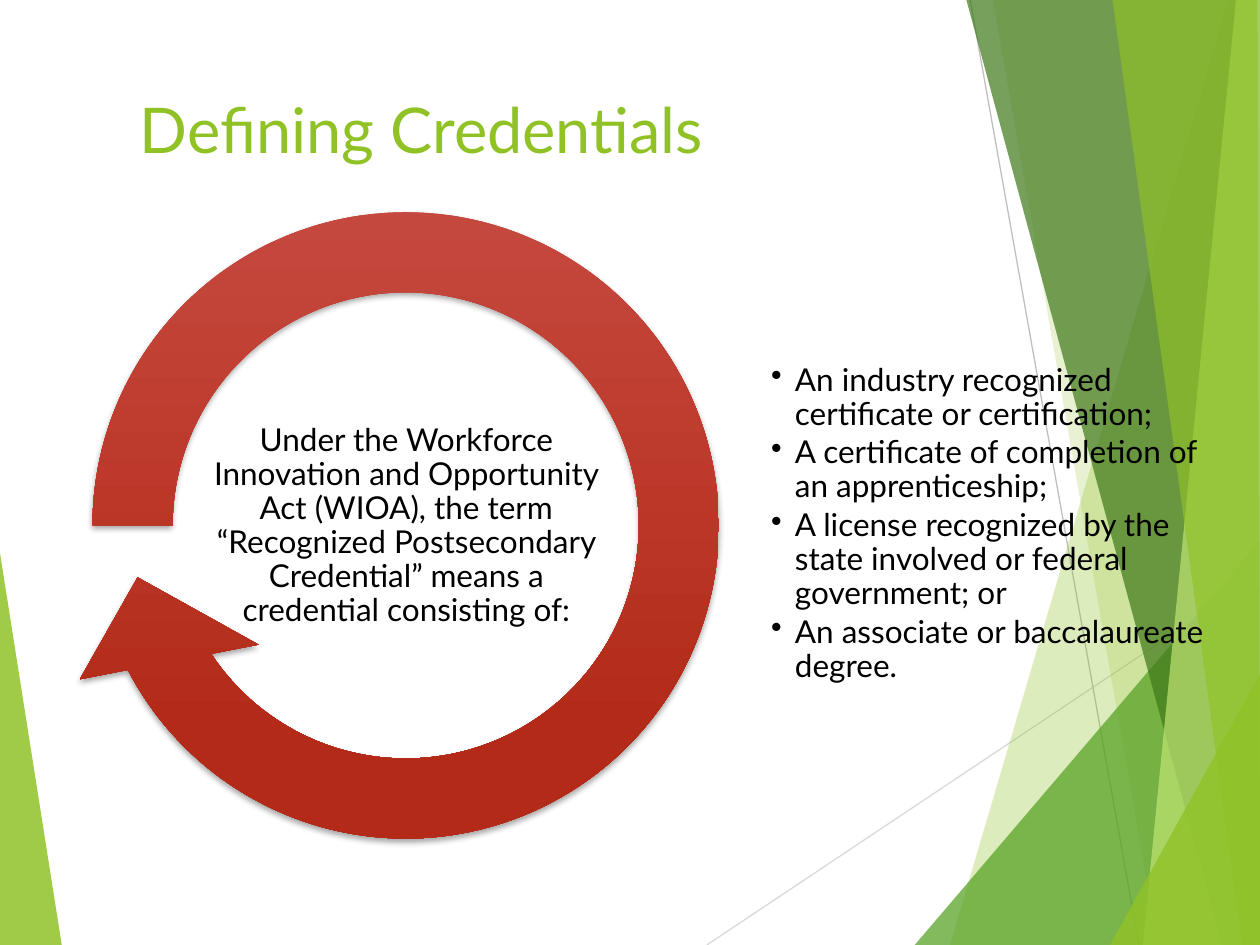
from lxml import etree
from pptx import Presentation
from pptx import util as u
from pptx.dml.color import RGBColor
from pptx.enum import shapes, text
from pptx.oxml import ns

LIME = RGBColor(0x90, 0xC2, 0x26)
GREEN = RGBColor(0x54, 0xA0, 0x21)
DARK = RGBColor(0x3F, 0x78, 0x19)
PALE = RGBColor(0xC0, 0xE4, 0x74)
RED = RGBColor(0xC7, 0x4B, 0x42)
BRICK = RGBColor(0xB3, 0x2B, 0x18)
BLACK = RGBColor(0, 0, 0)
GREY = RGBColor(0xBF, 0xBF, 0xBF)
SILVER = RGBColor(0xD9, 0xD9, 0xD9)

BODY = {"name": "Lato", "size": u.Pt(18), "color": BLACK}
HEAD = {"name": "Lato", "size": u.Pt(36), "color": LIME}
WIDE, HIGH = 10, 7.5

# Bands on the side edges: colour, opacity in percent, corners
BANDS = [
    (LIME, 85, [(0, 4.39), (0.49, HIGH), (0, HIGH)]),
    (LIME, 30, [(9.75, 0), (7.54, HIGH), (WIDE, HIGH), (WIDE, 0)]),
    (LIME, 20, [(7.88, 0), (9.19, HIGH), (WIDE, HIGH), (WIDE, 0)]),
    (GREEN, 72, [(7.26, HIGH), (WIDE, 4.29), (WIDE, HIGH)]),
    (DARK, 70, [(7.67, 0), (9.7, HIGH), (WIDE, HIGH), (WIDE, 0)]),
    (PALE, 70, [(9.81, 0), (9.07, HIGH), (WIDE, HIGH), (WIDE, 0)]),
    (LIME, 65, [(8.83, 0), (9.86, HIGH), (WIDE, HIGH), (9.98, 0)]),
    (LIME, 80, [(8.81, HIGH), (WIDE, 5.35), (WIDE, HIGH)]),
]
RAYS = [(SILVER, (5.61, HIGH), (WIDE, 4.57)), (GREY, (7.7, 0), (9.04, HIGH))]

TERM = ("Under the Workforce Innovation and Opportunity Act (WIOA), the term "
        "“Recognized Postsecondary Credential” means a credential consisting of:")
KINDS = [
    "An industry recognized certificate or certification;",
    "A certificate of completion of an apprenticeship;",
    "A license recognized by the state involved or federal government; or",
    "An associate or baccalaureate degree.",
]


def add_xml(parent, tag, **attrs):
    return etree.SubElement(parent, ns.qn(tag), attrs)


def style(font, look):
    for key, val in look.items():
        if key == "color":
            font.color.rgb = val
        else:
            setattr(font, key, val)


class Deck:
    def __init__(self):
        self.prs = Presentation()
        self.prs.slide_width = u.Inches(WIDE)
        self.prs.slide_height = u.Inches(HIGH)
        self.slide = self.prs.slides.add_slide(self.prs.slide_layouts[5])
        self.shapes = self.slide.shapes

    def band(self, color, alpha, points):
        spots = [(u.Inches(x), u.Inches(y)) for x, y in points]
        pen = self.shapes.build_freeform(*spots[0])
        pen.add_line_segments(spots[1:], close=True)
        shape = pen.convert_to_shape()
        shape.shadow.inherit = False
        shape.fill.solid()
        shape.fill.fore_color.rgb = color
        tint = shape.element.spPr.find(".//" + ns.qn("a:srgbClr"))
        add_xml(tint, "a:alpha", val=str(alpha * 1000))
        shape.line.fill.background()

    def ray(self, color, start, end):
        ends = [u.Inches(v) for v in start + end]
        line = self.shapes.add_connector(shapes.MSO_CONNECTOR.STRAIGHT, *ends)
        line.line.color.rgb = color
        line.line.width = u.Pt(0.75)
        add_xml(line.element.spPr, "a:effectLst")

    def title(self, words, box):
        shape = self.shapes.title
        self.place(shape, box)
        frame = shape.text_frame
        frame.text = words
        frame.vertical_anchor = text.MSO_ANCHOR.TOP
        frame.margin_left = u.Inches(0.44)
        para = frame.paragraphs[0]
        para.alignment = text.PP_ALIGN.LEFT
        style(para.runs[0].font, HEAD)

    def place(self, shape, box):
        for name, val in zip(("left", "top", "width", "height"), box):
            setattr(shape, name, u.Inches(val))

    def arrow(self, box, bends):
        shape = self.shapes.add_shape(shapes.MSO_SHAPE.CIRCULAR_ARROW,
                                      *[u.Inches(v) for v in box])
        for i, bend in enumerate(bends):
            shape.adjustments[i] = bend
        shape.line.fill.background()
        shape.fill.gradient()
        shape.fill.gradient_angle = 270
        for stop, color, spot in zip(shape.fill.gradient_stops,
                                     (RED, BRICK), (0, 0.78)):
            stop.color.rgb = color
            stop.position = spot
        # Soft shadow straight below
        shape.shadow.inherit = False
        glow = shape.element.spPr.find(ns.qn("a:effectLst"))
        cast = add_xml(glow, "a:outerShdw", blurRad=str(u.Pt(3)),
                       dist=str(u.Pt(2)), dir="5400000", rotWithShape="0")
        tint = add_xml(cast, "a:srgbClr", val=str(BLACK))
        add_xml(tint, "a:alpha", val="35000")

    def text(self, lines, box, align, bullet=False):
        frame = self.shapes.add_textbox(*[u.Inches(v) for v in box]).text_frame
        frame.word_wrap = True
        frame.vertical_anchor = text.MSO_ANCHOR.MIDDLE
        for side in ("left", "top", "right", "bottom"):
            setattr(frame, "margin_" + side, u.Inches(0.01))
        for i, words in enumerate(lines):
            para = frame.add_paragraph() if i else frame.paragraphs[0]
            para.alignment = align
            para.line_spacing = 0.9
            run = para.add_run()
            run.text = words
            style(run.font, BODY)
            if bullet:
                para.level = 1
                para.space_after = u.Pt(2.7)
                props = para._p.get_or_add_pPr()
                props.set("marL", str(u.Inches(0.19)))
                props.set("indent", str(u.Inches(-0.19)))
                add_xml(props, "a:buChar", char="•")


def main():
    deck = Deck()

    # Backdrop
    deck.band(*BANDS[0])
    for ray in RAYS:
        deck.ray(*ray)
    for band in BANDS[1:]:
        deck.band(*band)

    # Heading
    deck.title("Defining Credentials", (0.67, 0.67, 6.94, 1.44))

    # Ring with the term, and its list
    deck.arrow((0.33, 1.28, 5.78, 5.78), (0.11, 11.423, 90, 108, 0.125))
    deck.text(KINDS, (6.11, 2.42, 3.47, 3.48), text.PP_ALIGN.LEFT, bullet=True)
    deck.text([TERM], (1.61, 3.37, 3.23, 1.61), text.PP_ALIGN.CENTER)

    deck.prs.save("out.pptx")


if __name__ == "__main__":
    main()
